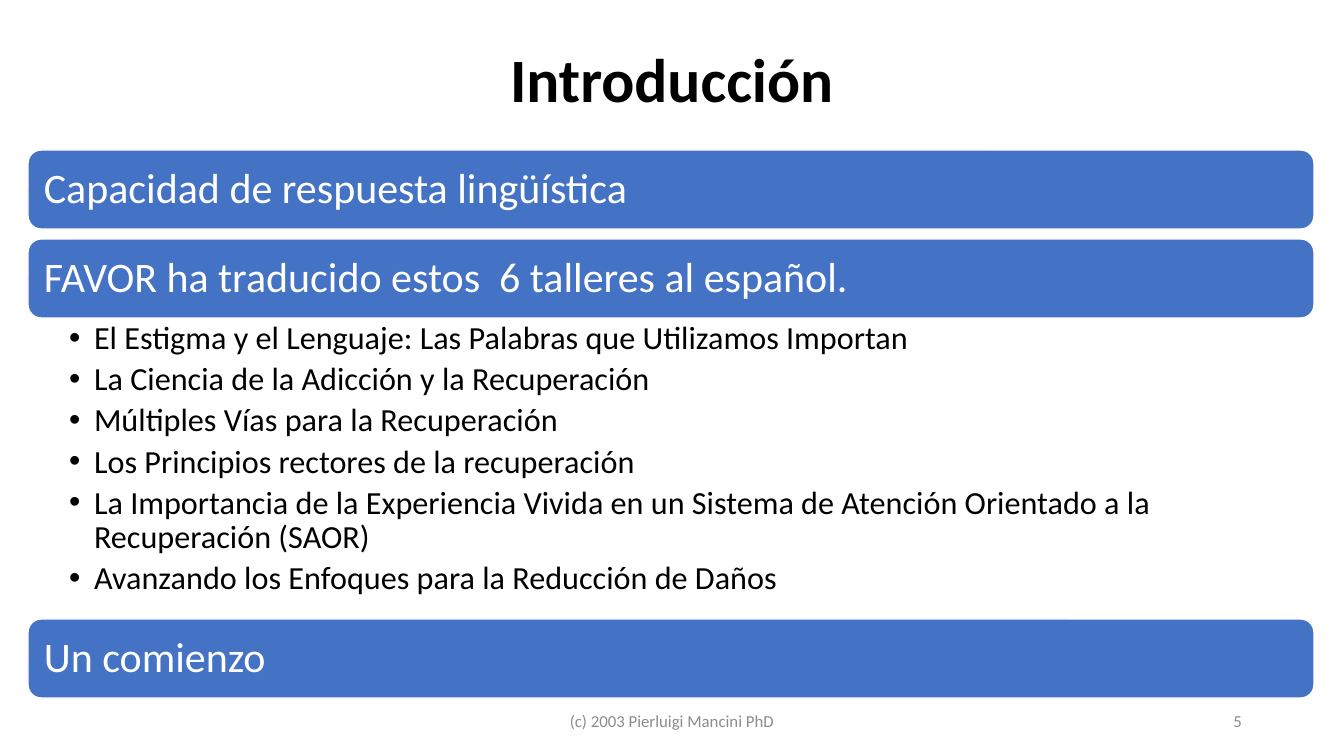
from dataclasses import dataclass

from lxml.etree import SubElement
from pptx import Presentation
from pptx.dml.color import RGBColor
from pptx.enum.shapes import MSO_SHAPE
from pptx.enum.text import MSO_ANCHOR, MSO_AUTO_SIZE, PP_ALIGN
from pptx.oxml.ns import qn
from pptx.util import Pt

EMU_PER_PX = 914400 / 100.8


@dataclass(frozen=True)
class Theme:
    font: str = "Calibri"
    ink: RGBColor = RGBColor(0x00, 0x00, 0x00)
    paper: RGBColor = RGBColor(0xFF, 0xFF, 0xFF)
    bar: RGBColor = RGBColor(0x44, 0x72, 0xC4)
    muted: RGBColor = RGBColor(0x8C, 0x8C, 0x8C)
    title_size: int = 44
    bar_size: int = 30
    topic_size: int = 23
    footer_size: int = 12


THEME = Theme()

HEADINGS = [
    "Capacidad de respuesta lingüística",
    "FAVOR ha traducido estos  6 talleres al español.",
    "Un comienzo",
]
WORKSHOPS = [
    "El Estigma y el Lenguaje: Las Palabras que Utilizamos\u00a0Importan".replace("\u00a0", " "),
    "La Ciencia de la Adicción y la Recuperación",
    "Múltiples Vías para la Recuperación",
    "Los Principios rectores de la recuperación",
    "La Importancia de la Experiencia Vivida en un Sistema de Atención "
    "Orientado a la Recuperación (SAOR)",
    "Avanzando los Enfoques para la Reducción de Daños",
]


def px(length):
    return round(length * EMU_PER_PX)


def set_frame(frame, anchor, left, top, right, bottom):
    frame.word_wrap = True
    frame.auto_size = MSO_AUTO_SIZE.NONE
    frame.vertical_anchor = anchor
    frame.margin_left, frame.margin_top = px(left), px(top)
    frame.margin_right, frame.margin_bottom = px(right), px(bottom)


def style_paragraph(paragraph, size, color, align=PP_ALIGN.LEFT, bold=False, spacing=0.9):
    paragraph.alignment = align
    paragraph.line_spacing = spacing
    for run in paragraph.runs:
        run.font.name = THEME.font
        run.font.size = Pt(size)
        run.font.bold = bold
        run.font.color.rgb = color


def add_bullet(paragraph, indent):
    properties = paragraph._p.get_or_add_pPr()
    properties.set("marL", str(px(indent)))
    properties.set("indent", str(-px(indent)))
    SubElement(properties, qn("a:buFont"), typeface="Arial")
    SubElement(properties, qn("a:buChar"), char="•")


def place_title(slide, left, top, width, height):
    title = slide.shapes.title
    title.left, title.top = px(left), px(top)
    title.width, title.height = px(width), px(height)
    title.text_frame.text = "Introducción"
    set_frame(title.text_frame, MSO_ANCHOR.MIDDLE, 10, 5, 10, 5)
    style_paragraph(title.text_frame.paragraphs[0], THEME.title_size, THEME.ink,
                    PP_ALIGN.CENTER, bold=True)


def add_heading_bar(slide, heading, left, top, width, height):
    bar = slide.shapes.add_shape(MSO_SHAPE.ROUNDED_RECTANGLE,
                                 px(left), px(top), px(width), px(height))
    bar.shadow.inherit = False
    bar.fill.solid()
    bar.fill.fore_color.rgb = THEME.bar
    bar.line.color.rgb = THEME.paper
    bar.line.width = Pt(1)
    bar.text_frame.text = heading
    set_frame(bar.text_frame, MSO_ANCHOR.MIDDLE, 12, 12, 12, 12)
    style_paragraph(bar.text_frame.paragraphs[0], THEME.bar_size, THEME.paper)


def add_workshops(slide, left, top, width, height):
    frame = slide.shapes.add_textbox(px(left), px(top), px(width), px(height)).text_frame
    set_frame(frame, MSO_ANCHOR.TOP, 41, 4, 23, 4)
    for index, workshop in enumerate(WORKSHOPS):
        paragraph = frame.add_paragraph() if index else frame.paragraphs[0]
        paragraph.text = workshop
        add_bullet(paragraph, 25)
        style_paragraph(paragraph, THEME.topic_size, THEME.ink)
        paragraph.space_after = Pt(4.5)


def add_outline(slide, left, top, width, height):
    """Stack the heading bars, with the workshops under the second one."""
    bar_height, gap = 79, 10
    second_top = top + bar_height + gap
    workshops_top = second_top + bar_height
    last_top = top + height - bar_height
    for heading, bar_top in zip(HEADINGS, (top, second_top, last_top)):
        add_heading_bar(slide, heading, left, bar_top, width, bar_height)
    add_workshops(slide, left, workshops_top, width, last_top - workshops_top)


def add_footer(slide, left, top, width, height):
    """Put the copyright line in the middle and the page number at the right."""
    notice_width, number_width = 454, 302
    parts = [
        ("(c) 2003 Pierluigi Mancini PhD", left + (width - notice_width) // 2,
         notice_width, PP_ALIGN.CENTER),
        ("5", left + width - number_width, number_width, PP_ALIGN.RIGHT),
    ]
    for wording, part_left, part_width, align in parts:
        frame = slide.shapes.add_textbox(px(part_left), px(top),
                                         px(part_width), px(height)).text_frame
        frame.text = wording
        set_frame(frame, MSO_ANCHOR.MIDDLE, 10, 5, 10, 5)
        style_paragraph(frame.paragraphs[0], THEME.footer_size, THEME.muted, align, spacing=1.0)


def main():
    presentation = Presentation()
    presentation.slide_width, presentation.slide_height = px(1344), px(756)
    slide = presentation.slides.add_slide(presentation.slide_layouts[5])
    place_title(slide, 92, 10, 1160, 146)
    add_outline(slide, 28, 150, 1286, 548)
    add_footer(slide, 92, 701, 1160, 40)
    presentation.save("out.pptx")


if __name__ == "__main__":
    main()
